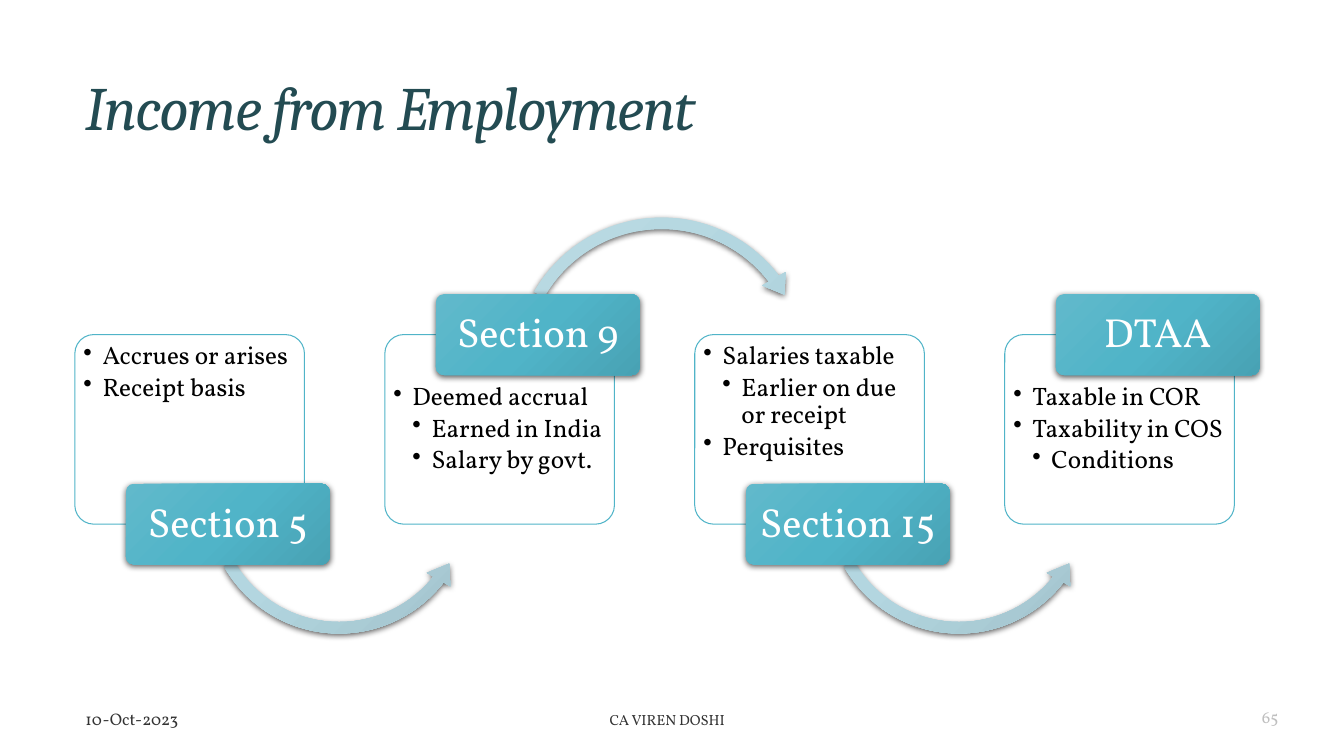
from dataclasses import dataclass

from lxml.etree import SubElement
from pptx import Presentation
from pptx.dml.color import RGBColor
from pptx.enum.shapes import MSO_SHAPE
from pptx.enum.text import MSO_ANCHOR, MSO_AUTO_SIZE, PP_ALIGN
from pptx.oxml import parse_xml
from pptx.oxml.ns import qn
from pptx.util import Pt

DRAWING_NS = "http://schemas.openxmlformats.org/drawingml/2006/main"


@dataclass(frozen=True)
class Theme:
    title_font: str = "Cambria"
    body_font: str = "Vollkorn"
    title_color: str = "234B52"
    outline: str = "50B4C8"
    white: str = "FFFFFF"
    black: str = "000000"
    footer_color: str = "333333"
    number_color: str = "BFBFBF"
    tag_gradient: tuple = ("61B9CB", "50B4C8", "48A2B4")
    arrow_gradient: tuple = ("BBDBE3", "B3D6E0", "A0C1CA")
    title_size: float = 44
    tag_size: float = 29
    bullet_size: float = 18
    footer_size: float = 12
    author_size: float = 10.5


THEME = Theme()

# Each step: tag, whether the tag sits on the top edge, (level, bullet) pairs
STEPS = [
    ("Section 5", False, [(0, "Accrues or arises"), (0, "Receipt basis")]),
    ("Section 9", True, [(0, "Deemed accrual"), (1, "Earned in India"),
                         (1, "Salary by govt.")]),
    ("Section 15", False, [(0, "Salaries taxable"),
                           (1, "Earlier on due or receipt"),
                           (0, "Perquisites")]),
    ("DTAA", True, [(0, "Taxable in COR"), (0, "Taxability in COS"),
                    (1, "Conditions")]),
]

CARD_WIDTH, CARD_HEIGHT, CARD_PITCH = 164, 135.4, 221.4
TAG_WIDTH, TAG_HEIGHT, TAG_OFFSET = 145.6, 57.8, 36.5
BULLET_INDENT = 13.6

# Keyed by whether the arrow leaves from a tag on the top edge:
# preset, size, offset from the card's left and top, adjustments
ARROWS = {
    False: (MSO_SHAPE.LEFT_CIRCULAR_ARROW, 200.2, 88.6, 18.8,
            (0.041, 5.198, 22.953, 90.245, 0.048)),
    True: (MSO_SHAPE.CIRCULAR_ARROW, 221, 87.3, -89.2,
           (0.037, 4.662, 193.583, 125.755, 0.044)),
}


def apply_format(target, values):
    for name, value in values.items():
        setattr(target, name, value)


def write_run(paragraph, text, size, color, font=THEME.body_font, italic=False):
    run = paragraph.add_run()
    run.text = text
    apply_format(run.font, {"name": font, "size": Pt(size), "italic": italic})
    run.font.color.rgb = RGBColor.from_string(color)
    return run


def set_frame(frame, anchor, insets=(7.2, 3.6, 7.2, 3.6)):
    """Format a text frame; insets run left, top, right, bottom."""
    left, top, right, bottom = map(Pt, insets)
    apply_format(frame, {
        "word_wrap": True, "auto_size": MSO_AUTO_SIZE.NONE,
        "vertical_anchor": anchor, "margin_left": left, "margin_top": top,
        "margin_right": right, "margin_bottom": bottom})


def add_plain_shape(slide, preset, box, adjustments):
    shape = slide.shapes.add_shape(preset, *map(Pt, box))
    shape.shadow.inherit = False
    for index, value in enumerate(adjustments):
        shape.adjustments[index] = value
    return shape


def add_raised_shape(slide, preset, box, adjustments, gradient):
    """Add an unlined shape with a diagonal gradient and a soft shadow."""
    shape = add_plain_shape(slide, preset, box, adjustments)
    shape.line.fill.background()
    stops = "".join(
        f'<a:gs pos="{index * 50000}"><a:srgbClr val="{color}"/></a:gs>'
        for index, color in enumerate(gradient))
    properties = shape.element.spPr
    properties.find(qn("a:ln")).addprevious(parse_xml(
        f'<a:gradFill xmlns:a="{DRAWING_NS}" rotWithShape="1">'
        f'<a:gsLst>{stops}</a:gsLst><a:lin ang="2700000" scaled="0"/>'
        f'</a:gradFill>'))
    properties.find(qn("a:effectLst")).append(parse_xml(
        f'<a:outerShdw xmlns:a="{DRAWING_NS}" blurRad="{Pt(4.5)}" '
        f'dist="{Pt(1.5)}" dir="5400000" rotWithShape="0">'
        f'<a:srgbClr val="{THEME.black}"><a:alpha val="63000"/></a:srgbClr>'
        f'</a:outerShdw>'))
    return shape


def add_bullets(frame, bullets):
    for index, (level, text) in enumerate(bullets):
        paragraph = frame.add_paragraph() if index else frame.paragraphs[0]
        apply_format(paragraph, {
            "level": level, "line_spacing": 0.9, "space_after": Pt(3),
            "alignment": PP_ALIGN.LEFT})
        write_run(paragraph, text, THEME.bullet_size, THEME.black)
        properties = paragraph._p.get_or_add_pPr()
        properties.set("marL", str(Pt(BULLET_INDENT * (level + 1))))
        properties.set("indent", str(Pt(-BULLET_INDENT)))
        SubElement(properties, qn("a:buChar")).set("char", "•")


def add_card(slide, box, tag_on_top, bullets):
    card = add_plain_shape(slide, MSO_SHAPE.ROUNDED_RECTANGLE, box, (0.1,))
    card.fill.solid()
    card.fill.fore_color.rgb = RGBColor.from_string(THEME.white)
    card.line.color.rgb = RGBColor.from_string(THEME.outline)
    card.line.width = Pt(0.75)
    top_inset = 31.5 if tag_on_top else 2.2
    set_frame(card.text_frame, MSO_ANCHOR.TOP, (2.2, top_inset, 2.2, 2.2))
    add_bullets(card.text_frame, bullets)


def add_tag(slide, box, text):
    tag = add_raised_shape(slide, MSO_SHAPE.ROUNDED_RECTANGLE, box, (0.1,),
                           THEME.tag_gradient)
    set_frame(tag.text_frame, MSO_ANCHOR.MIDDLE, (4.3, 2.9, 4.3, 2.9))
    paragraph = tag.text_frame.paragraphs[0]
    apply_format(paragraph, {"alignment": PP_ALIGN.CENTER, "line_spacing": 0.9})
    write_run(paragraph, text, THEME.tag_size, THEME.white)


def add_process(slide, left, top):
    """Place the cards in a row, tags on alternating edges, arrows between."""
    for index, (label, tag_on_top, bullets) in enumerate(STEPS):
        x = left + index * CARD_PITCH
        add_card(slide, (x, top, CARD_WIDTH, CARD_HEIGHT), tag_on_top, bullets)
        if index < len(STEPS) - 1:
            preset, size, dx, dy, adjustments = ARROWS[tag_on_top]
            add_raised_shape(slide, preset, (x + dx, top + dy, size, size),
                             adjustments, THEME.arrow_gradient)
        tagged_edge = top if tag_on_top else top + CARD_HEIGHT
        add_tag(slide, (x + TAG_OFFSET, tagged_edge - TAG_HEIGHT / 2,
                        TAG_WIDTH, TAG_HEIGHT), label)


def add_title(slide, box, text):
    title = slide.shapes.title
    apply_format(title, dict(zip(("left", "top", "width", "height"),
                                 map(Pt, box))))
    set_frame(title.text_frame, MSO_ANCHOR.MIDDLE)
    paragraph = title.text_frame.paragraphs[0]
    apply_format(paragraph, {"alignment": PP_ALIGN.LEFT, "line_spacing": 0.85})
    run = write_run(paragraph, text, THEME.title_size, THEME.title_color,
                    THEME.title_font, italic=True)
    run.font._element.set("spc", "-120")


def add_footer(slide, top, height):
    entries = [
        ("10-Oct-2023", 54, 324, PP_ALIGN.LEFT, MSO_ANCHOR.MIDDLE,
         THEME.footer_size, THEME.footer_color),
        ("CA VIREN DOSHI", 278.6, 396, PP_ALIGN.CENTER, MSO_ANCHOR.MIDDLE,
         THEME.author_size, THEME.footer_color),
        ("65", 698.4, 221.8, PP_ALIGN.RIGHT, MSO_ANCHOR.BOTTOM,
         THEME.footer_size, THEME.number_color),
    ]
    for text, left, width, alignment, anchor, size, color in entries:
        entry = slide.shapes.add_textbox(*map(Pt, (left, top, width, height)))
        set_frame(entry.text_frame, anchor)
        paragraph = entry.text_frame.paragraphs[0]
        paragraph.alignment = alignment
        write_run(paragraph, text, size, color)


def main():
    deck = Presentation()
    deck.slide_width, deck.slide_height = Pt(960), Pt(540)
    slide = deck.slides.add_slide(deck.slide_layouts.get_by_name("Title Only"))
    add_title(slide, (54, 14.4, 848, 130.3), "Income from Employment")
    add_process(slide, 53.5, 239)
    add_footer(slide, 504.7, 18)
    deck.save("out.pptx")


if __name__ == "__main__":
    main()
